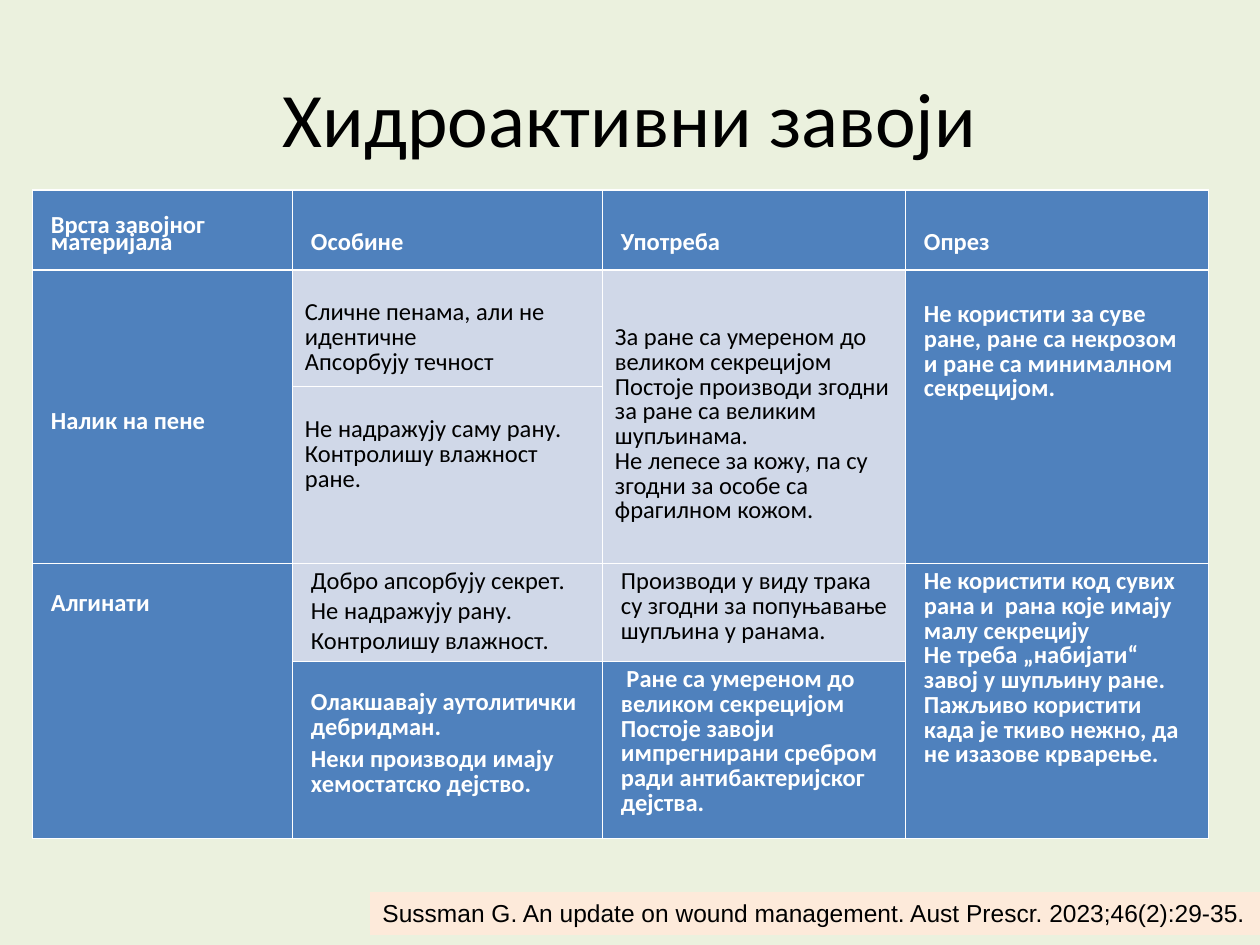
from dataclasses import dataclass

from lxml.etree import SubElement
from pptx import Presentation
from pptx.dml.color import RGBColor
from pptx.enum.text import MSO_ANCHOR as Anchor, MSO_AUTO_SIZE as AutoSize, PP_ALIGN as Align
from pptx.oxml.ns import qn
from pptx.util import Emu, Pt

COLORS = {
    "background": "EBF1DE",
    "blue": "4F81BD",
    "pale": "D0D8E8",
    "white": "FFFFFF",
    "black": "000000",
    "citation": "FDEADA",
}
TEXT_COLORS = {"blue": "white", "pale": "black"}
COLUMN_WIDTHS = [260, 310, 303, 303]
ROW_HEIGHTS = [80, 117, 177, 98, 177]
TIGHT = 0.83


@dataclass
class Entry:
    """Content of one table cell; top and left are its inner margins in px."""
    row: int
    column: int
    paragraphs: list
    fill: str = "blue"
    top: int = 6
    left: int = 19
    rows: int = 1
    line: object = TIGHT
    gap: float = 0
    anchor: Anchor = Anchor.TOP


ENTRIES = [
    Entry(0, 0, ["Врста завојног материјала"], top=32, line=Pt(10)),
    Entry(0, 1, ["Особине"], top=41),
    Entry(0, 2, ["Употреба"], top=41),
    Entry(0, 3, ["Опрез"], top=41),
    Entry(1, 0, ["Налик на пене"], top=29, rows=2, line=Pt(9), anchor=Anchor.MIDDLE),
    Entry(1, 1, ["Сличне пенама, али не идентичне", "Апсорбују течност"],
          "pale", top=31, left=13),
    Entry(1, 2, ["За ране са умереном до великом секрецијом",
                 "Постоје производи згодни за ране са великим шупљинама.",
                 "Не лепесе за кожу, па су згодни за особе са фрагилном кожом."],
          "pale", top=56, left=13, rows=2),
    Entry(1, 3, ["Не користити за суве ране, ране са некрозом и ране са минималном секрецијом."],
          top=33, rows=2),
    Entry(2, 1, ["Не надражују саму рану.", "Контролишу влажност ране."],
          "pale", top=31, left=13),
    Entry(3, 0, ["Алгинати"], top=38, rows=2, line=Pt(9)),
    Entry(3, 1, ["Добро апсорбују секрет.", "Не надражују рану.", "Контролишу влажност."],
          "pale", gap=3),
    Entry(3, 2, ["Производи у виду трака су згодни за попуњавање шупљина у ранама."], "pale"),
    Entry(3, 3, ["Не користити код сувих рана и  рана које имају малу секрецију",
                 "Не треба „набијати“ завој у шупљину ране.",
                 "Пажљиво користити када је ткиво нежно, да не изазове крварење."], rows=2),
    Entry(4, 1, ["Олакшавају аутолитички дебридман.",
                 "Неки производи имају хемостатско дејство."], top=29, gap=4.2),
    Entry(4, 2, [" Ране са умереном до великом секрецијом",
                 "Постоје завоји импрегнирани сребром ради антибактеријског дејства."]),
]


def px(length):
    return Emu(round(length * 914400 / 126))


def rgb(name):
    return RGBColor.from_string(COLORS[name])


def style(paragraph, font_name, size, color, bold=False):
    for run in paragraph.runs:
        font = run.font
        font.name, font.size, font.bold = font_name, Pt(size), bold
        font.color.rgb = rgb(color)


def place_title(slide, left, top, width, height):
    title = slide.shapes.title
    title.left, title.top, title.width, title.height = map(px, (left, top, width, height))
    frame = title.text_frame
    frame.text = "Хидроактивни завоји"
    frame.vertical_anchor = Anchor.MIDDLE
    frame.paragraphs[0].alignment = Align.CENTER
    style(frame.paragraphs[0], "Calibri", 44, "black")


def add_borders(cell):
    properties = cell._tc.get_or_add_tcPr()
    for side, width in (("L", 0.25), ("R", 0.25), ("T", 0.75), ("B", 0.75)):
        line = SubElement(properties, qn(f"a:ln{side}"), w=str(Pt(width)))
        fill = SubElement(line, qn("a:solidFill"))
        SubElement(fill, qn("a:srgbClr"), val=COLORS["white"])


def fill_cell(cell, entry):
    cell.fill.solid()
    cell.fill.fore_color.rgb = rgb(entry.fill)
    cell.margin_top, cell.margin_left = px(entry.top), px(entry.left)
    cell.vertical_anchor = entry.anchor
    frame = cell.text_frame
    frame.text = "\n".join(entry.paragraphs)
    for index, paragraph in enumerate(frame.paragraphs):
        paragraph.line_spacing = entry.line
        if index:
            paragraph.space_before = Pt(entry.gap)
        style(paragraph, "Calibri", 14, TEXT_COLORS[entry.fill], entry.fill == "blue")


def add_dressings_table(slide, left, top):
    table = slide.shapes.add_table(
        len(ROW_HEIGHTS), len(COLUMN_WIDTHS), px(left), px(top),
        px(sum(COLUMN_WIDTHS)), px(sum(ROW_HEIGHTS))).table
    table.horz_banding = False
    for column, width in zip(table.columns, COLUMN_WIDTHS):
        column.width = px(width)
    for row, height in zip(table.rows, ROW_HEIGHTS):
        row.height = px(height)
    for cell in table.iter_cells():
        add_borders(cell)
    for entry in ENTRIES:
        cell = table.cell(entry.row, entry.column)
        if entry.rows > 1:
            cell.merge(table.cell(entry.row + entry.rows - 1, entry.column))
        fill_cell(cell, entry)


def add_citation(slide, left, top, width, height):
    citation = slide.shapes.add_textbox(*map(px, (left, top, width, height)))
    citation.fill.solid()
    citation.fill.fore_color.rgb = rgb("citation")
    frame = citation.text_frame
    frame.word_wrap = False
    frame.auto_size = AutoSize.SHAPE_TO_FIT_TEXT
    frame.text = "Sussman G. An update on wound management. Aust Prescr. 2023;46(2):29-35."
    style(frame.paragraphs[0], "Arial", 14, "black")


def main():
    presentation = Presentation()
    presentation.slide_width, presentation.slide_height = px(1260), px(945)
    slide = presentation.slides.add_slide(presentation.slide_layouts[5])
    slide.background.fill.solid()
    slide.background.fill.fore_color.rgb = rgb("background")
    place_title(slide, 63, 38, 1134, 158)
    add_dressings_table(slide, 32, 190)
    add_citation(slide, 370, 892, 901, 43)
    presentation.save("out.pptx")


if __name__ == "__main__":
    main()
